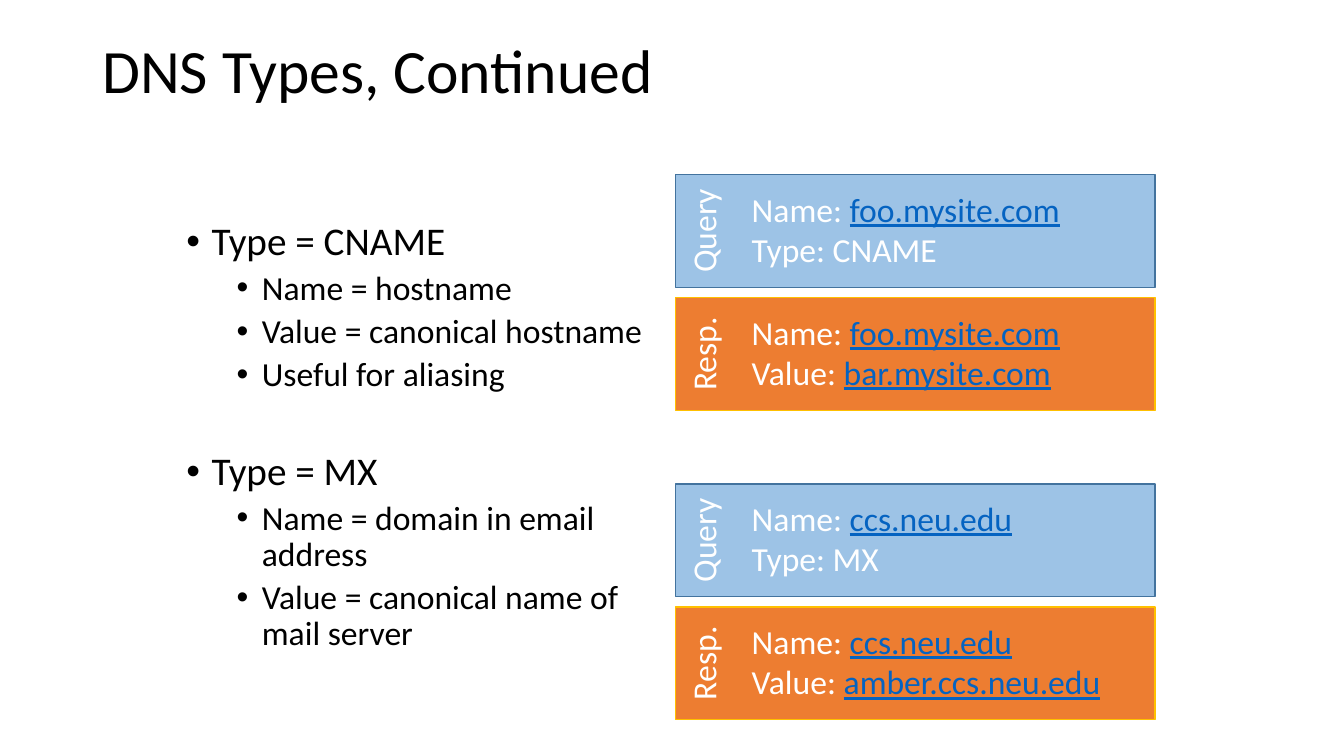
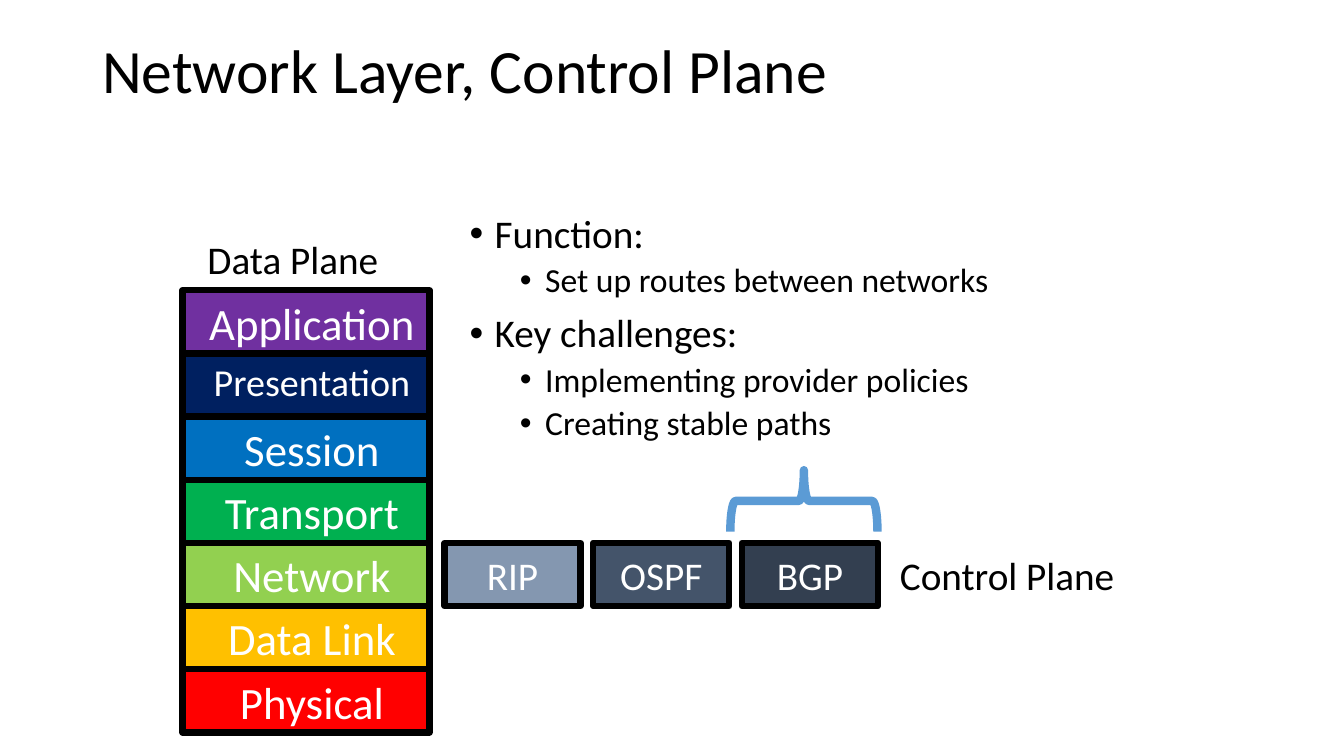
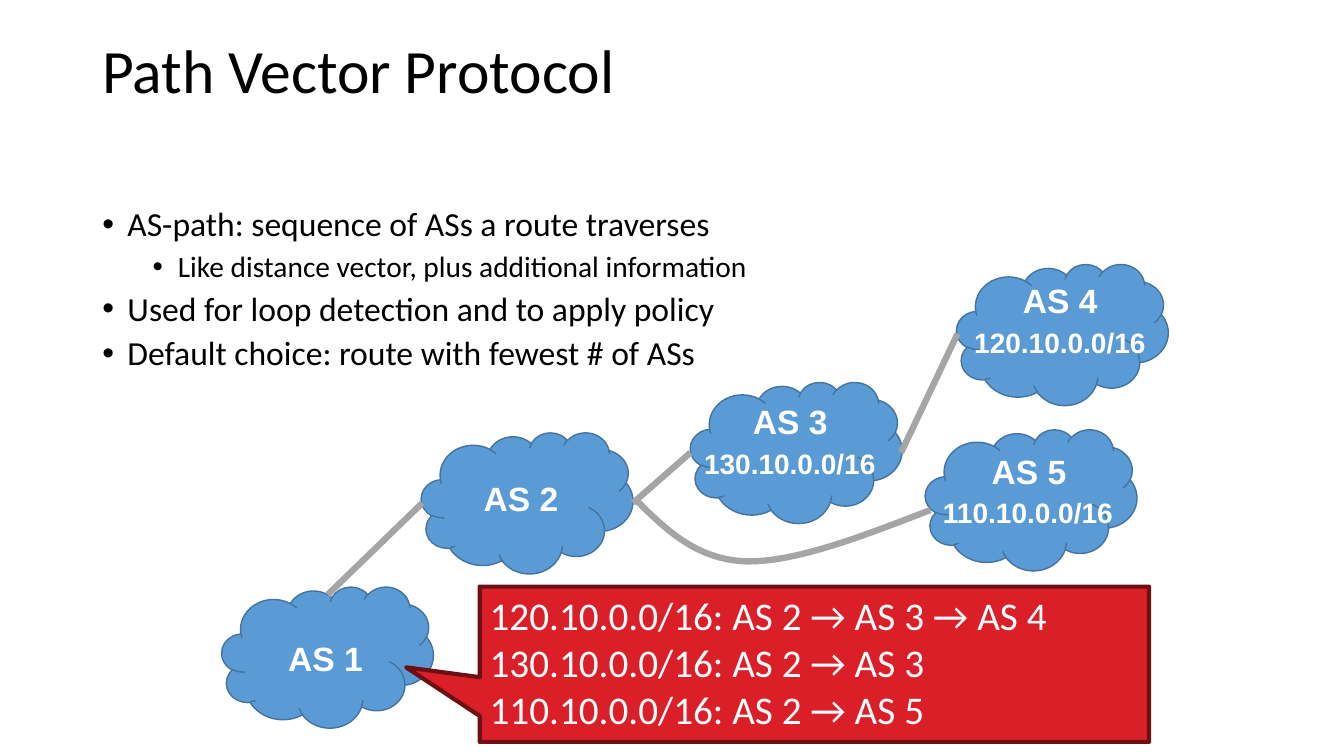
from collections import namedtuple

from lxml import etree
from pptx import Presentation
from pptx import util as u
from pptx.dml.color import RGBColor
from pptx.enum import shapes, text
from pptx.oxml import ns

COLUMNS, ROWS = 80, 45
CELL = u.Pt(12)

BLACK = RGBColor(0x00, 0x00, 0x00)
WHITE = RGBColor(0xFF, 0xFF, 0xFF)
LINK = RGBColor(0x05, 0x63, 0xC1)
BLUE = RGBColor(0x5B, 0x9B, 0xD5)
BLUE_EDGE = RGBColor(0x43, 0x73, 0x9E)
PALE_BLUE = RGBColor(0x9D, 0xC3, 0xE6)
ORANGE = RGBColor(0xED, 0x7D, 0x31)
GOLD = RGBColor(0xFF, 0xC0, 0x00)
GRAY = RGBColor(0xA5, 0xA5, 0xA5)
CALLOUT = RGBColor(0xDA, 0x1F, 0x28)
CALLOUT_EDGE = RGBColor(0x6D, 0x10, 0x14)
PURPLE = RGBColor(0x70, 0x30, 0xA0)
NAVY = RGBColor(0x00, 0x20, 0x60)
STRONG_BLUE = RGBColor(0x00, 0x70, 0xC0)
GREEN = RGBColor(0x00, 0xB0, 0x50)
LIME = RGBColor(0x92, 0xD0, 0x50)
RED = RGBColor(0xFF, 0x00, 0x00)
SLATE_LIGHT = RGBColor(0x84, 0x97, 0xB0)
SLATE = RGBColor(0x44, 0x54, 0x6A)
SLATE_DARK = RGBColor(0x33, 0x3F, 0x50)

TOP = text.MSO_ANCHOR.TOP
MIDDLE = text.MSO_ANCHOR.MIDDLE
LEFT = text.PP_ALIGN.LEFT
CENTER = text.PP_ALIGN.CENTER
KIND = shapes.MSO_SHAPE


class Box(namedtuple("Box", "left top width height")):
    def inner(self, left, top, width, height):
        return Box(self.left + left, self.top + top, width, height)

    def emu(self):
        return [cells(value) for value in self]


def cells(count):
    return u.Emu(round(count * CELL))


def add_span(para, words, size, font, color, bold=False, underline=None):
    span = para.add_run()
    span.text = words
    span.font.size = u.Pt(size)
    span.font.name = font
    span.font.bold = bold
    span.font.underline = underline
    span.font.color.rgb = color


def write(shape, lines, size=24, font="Calibri", color=WHITE, bold=False,
          align=LEFT, anchor=TOP, wrap=True, spacing=None, indent=0):
    frame = shape.text_frame
    frame.word_wrap = wrap
    frame.vertical_anchor = anchor
    if not wrap:
        frame.auto_size = text.MSO_AUTO_SIZE.SHAPE_TO_FIT_TEXT
    for index, line in enumerate(lines):
        para = frame.add_paragraph() if index else frame.paragraphs[0]
        para.alignment = align
        if spacing:
            para.line_spacing = spacing
        if indent:
            para._p.get_or_add_pPr().set("marL", str(cells(indent)))
        plain, link = line if isinstance(line, tuple) else (line, None)
        add_span(para, plain, size, font, color, bold)
        if link:
            add_span(para, link, size, font, LINK, bold, True)


def add_label(page, box, lines, **style):
    label = page.shapes.add_textbox(*box.emu())
    write(label, lines, **style)
    return label


def add_block(page, kind, box, fill, edge, weight):
    block = page.shapes.add_shape(kind, *box.emu())
    block.shadow.inherit = False
    if fill is None:
        block.fill.background()
    else:
        block.fill.solid()
        block.fill.fore_color.rgb = fill
    block.line.color.rgb = edge
    block.line.width = u.Pt(weight)
    return block


def add_page(deck, title):
    page = deck.slides.add_slide(deck.slide_layouts[6])
    add_label(page, Box(5.5, 0, 69, 8.7), [title], size=44, color=BLACK,
              anchor=MIDDLE, spacing=0.9)
    return page


def add_bullets(page, box, items, sizes=(28, 24), gaps=(10, 5), section_gap=None):
    frame = page.shapes.add_textbox(*box.emu()).text_frame
    frame.word_wrap = True
    frame.vertical_anchor = MIDDLE
    for index, (level, words) in enumerate(items):
        para = frame.add_paragraph() if index else frame.paragraphs[0]
        properties = para._p.get_or_add_pPr()
        properties.set("marL", str(cells(1.5 + 3 * level)))
        properties.set("indent", str(-cells(1.5)))
        etree.SubElement(properties, ns.qn("a:buFont")).set("typeface", "Arial")
        etree.SubElement(properties, ns.qn("a:buChar")).set("char", "•")
        para.level = level
        para.line_spacing = 0.9
        if index:
            gap = section_gap if section_gap and level == 0 else gaps[level]
            para.space_before = u.Pt(gap)
        add_span(para, words, sizes[level], "Calibri", BLACK)


def add_message(page, box, heading, lines, fill, edge):
    add_block(page, KIND.RECTANGLE, box, fill, edge, 1)
    label = add_label(page, box.inner(-1.5, 1.86, 6.3, 3), [heading],
                      align=CENTER, wrap=False)
    label.rotation = 270
    add_label(page, box.inner(3.96, 0.54, 23.5, 5.46), lines)


def add_exchange(page, box, query, response):
    card = box.inner(0, 0, box.width, 6.72)
    add_message(page, card, "Query", query, PALE_BLUE, BLUE_EDGE)
    add_message(page, card.inner(0, 7.32, *card[2:]), "Resp.", response, ORANGE, GOLD)


def add_layers(page, box, layers):
    height = box.height / len(layers)
    for row, (name, fill, size) in enumerate(layers):
        layer = add_block(page, KIND.RECTANGLE,
                          box.inner(0, row * height, box.width, height), fill, BLACK, 4.5)
        write(layer, [name], size=size, align=CENTER, indent=0.72)
    add_label(page, box.inner(0.9, -3.54, 11.46, 3.42), ["Data Plane"],
              size=28, color=BLACK, wrap=False)


def add_protocols(page, box, protocols):
    step = 8.85
    for column, (name, fill) in enumerate(protocols):
        protocol = add_block(page, KIND.RECTANGLE,
                             box.inner(column * step, 0, 8.1, box.height), fill, BLACK, 4.5)
        write(protocol, [name], size=28, align=CENTER, anchor=MIDDLE)
    brace = add_block(page, KIND.LEFT_BRACE, box.inner(19.56, -6.88, 3.66, 8.76), None, BLUE, 6)
    brace.rotation = 90
    add_label(page, box.inner(26.52, 0.2, 14.1, 3.42), ["Control Plane"],
              size=28, color=BLACK, wrap=False)


def add_cloud(page, box, name, prefix, shift):
    add_block(page, KIND.CLOUD, box, BLUE, BLUE_EDGE, 1)
    label = box.inner(*shift, 5.7, 3)
    style = dict(font="Arial", bold=True, wrap=False)
    add_label(page, label, [name], size=24, **style)
    if prefix:
        add_label(page, label.inner(-2.9, 2.7, 11.4, 2.58), [prefix], size=20, **style)


def add_link(page, start, end):
    link = page.shapes.add_connector(shapes.MSO_CONNECTOR.STRAIGHT,
                                     *map(cells, start + end))
    link.line.color.rgb = GRAY
    link.line.width = u.Pt(4.5)
    etree.SubElement(link._element.spPr, ns.qn("a:effectLst"))


def bezier(points, steps=16):
    for step in range(1, steps + 1):
        t = step / steps
        weights = ((1 - t) ** 3, 3 * t * (1 - t) ** 2, 3 * t * t * (1 - t), t ** 3)
        yield tuple(cells(sum(weight * point[axis] for weight, point in zip(weights, points)))
                    for axis in (0, 1))


def add_curve(page, points):
    builder = page.shapes.build_freeform(*map(cells, points[0]))
    for start in range(0, len(points) - 1, 3):
        builder.add_line_segments(list(bezier(points[start:start + 4])), close=False)
    curve = builder.convert_to_shape()
    curve.shadow.inherit = False
    curve.fill.background()
    curve.line.color.rgb = GRAY
    curve.line.width = u.Pt(4.5)


def add_routes(page, box, routes):
    callout = add_block(page, KIND.RECTANGULAR_CALLOUT, box, CALLOUT, CALLOUT_EDGE, 3)
    callout.adjustments[0] = -0.61
    callout.adjustments[1] = 0.02
    write(callout, routes, size=28)


def build_dns(deck):
    page = add_page(deck, "DNS Types, Continued")
    add_bullets(page, Box(10.5, 10.5, 29.94, 31.08), [
        (0, "Type = CNAME"),
        (1, "Name = hostname"),
        (1, "Value = canonical hostname"),
        (1, "Useful for aliasing"),
        (0, "Type = MX"),
        (1, "Name = domain in email address"),
        (1, "Value = canonical name of mail server"),
    ], section_gap=41.4)
    exchanges = [
        ("CNAME", "foo.mysite.com", "bar.mysite.com"),
        ("MX", "ccs.neu.edu", "amber.ccs.neu.edu"),
    ]
    for index, (kind, name, value) in enumerate(exchanges):
        add_exchange(page, Box(40.2, 10.38 + index * 18.42, 28.56, 14.04),
                     [("Name: ", name), f"Type: {kind}"],
                     [("Name: ", name), ("Value: ", value)])


def build_network_layer(deck):
    page = add_page(deck, "Network Layer, Control Plane")
    add_bullets(page, Box(27.36, 10.26, 41.7, 18.6), [
        (0, "Function:"),
        (1, "Set up routes between networks"),
        (0, "Key challenges:"),
        (1, "Implementing provider policies"),
        (1, "Creating stable paths"),
    ])
    add_layers(page, Box(10.86, 17.28, 14.7, 26.32), [
        ("Application", PURPLE, 32),
        ("Presentation", NAVY, 27.2),
        ("Session", STRONG_BLUE, 32),
        ("Transport", GREEN, 32),
        ("Network", LIME, 32),
        ("Data Link", GOLD, 32),
        ("Physical", RED, 32),
    ])
    add_protocols(page, Box(26.46, 32.32, 40.62, 3.76),
                  [("RIP", SLATE_LIGHT), ("OSPF", SLATE), ("BGP", SLATE_DARK)])


def build_path_vector(deck):
    page = add_page(deck, "Path Vector Protocol")
    add_bullets(page, Box(5.5, 10.5, 63.5, 13.56), [
        (0, "AS-path: sequence of ASs a route traverses"),
        (1, "Like distance vector, plus additional information"),
        (0, "Used for loop detection and to apply policy"),
        (0, "Default choice: route with fewest # of ASs"),
    ], sizes=(24, 21), gaps=(6, 6))
    clouds = [
        ("AS 1", None, (13.2, 34.92), (3.36, 2.76)),
        ("AS 2", None, (25.08, 25.74), (3.12, 2.4)),
        ("AS 3", "130.10.0.0/16", (41.1, 22.74), (3.12, 0.84)),
        ("AS 4", "120.10.0.0/16", (56.94, 15.72), (3.36, 0.66)),
        ("AS 5", "110.10.0.0/16", (55.08, 25.56), (3.36, 0.96)),
    ]
    for name, prefix, corner, shift in clouds:
        add_cloud(page, Box(*corner, 12.6, 8.4), name, prefix, shift)
    for start, end in [
        ((25.14, 29.94), (19.5, 35.4)),
        ((37.68, 29.94), (41.1, 26.94)),
        ((57, 19.86), (53.64, 26.94)),
    ]:
        add_link(page, start, end)
    add_routes(page, Box(28.56, 34.92, 39.84, 9.24), [
        "120.10.0.0/16: AS 2 → AS 3 → AS 4",
        "130.10.0.0/16: AS 2 → AS 3",
        "110.10.0.0/16: AS 2 → AS 5",
    ])
    add_curve(page, [(37.86, 29.76), (39.66, 31.56), (41.46, 33.3), (44.4, 33.42),
                     (47.34, 33.48), (51.36, 31.92), (55.38, 30.36)])


def main():
    deck = Presentation()
    deck.slide_width = cells(COLUMNS)
    deck.slide_height = cells(ROWS)
    build_dns(deck)
    build_network_layer(deck)
    build_path_vector(deck)
    deck.save("out.pptx")


if __name__ == "__main__":
    main()
